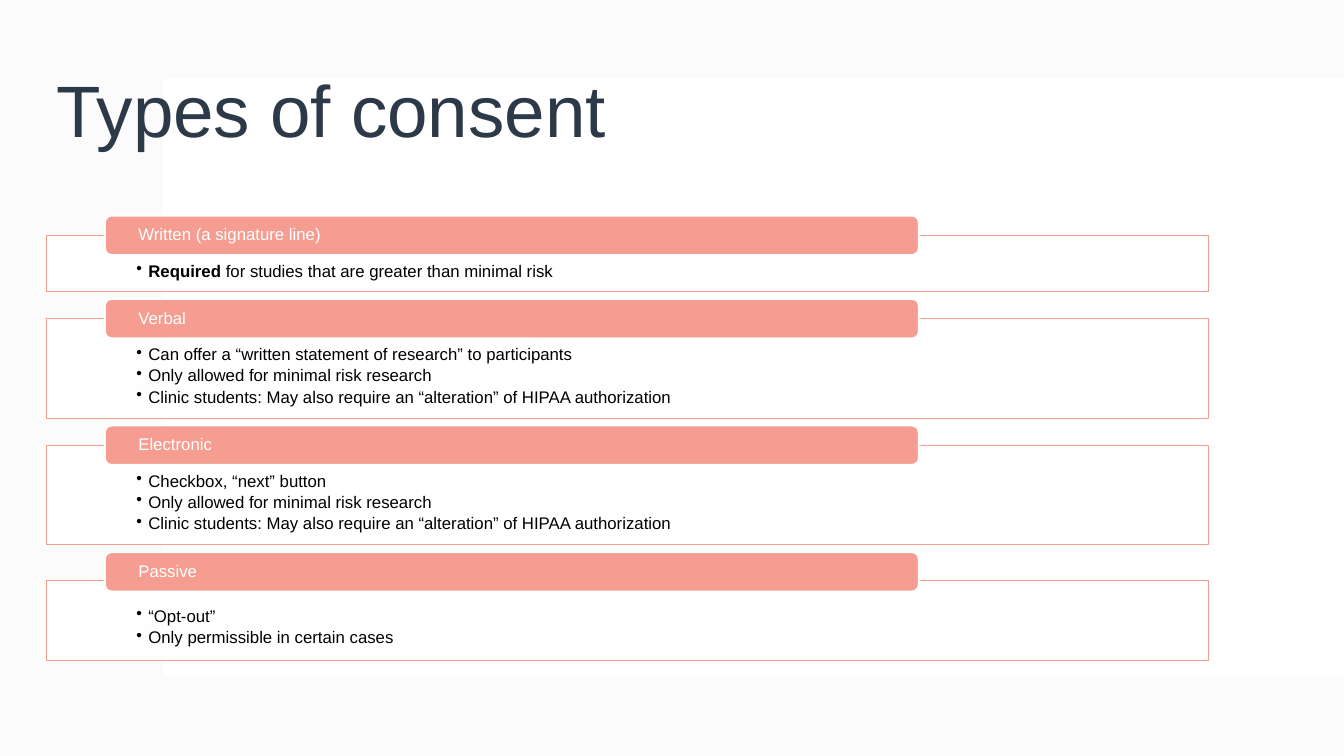
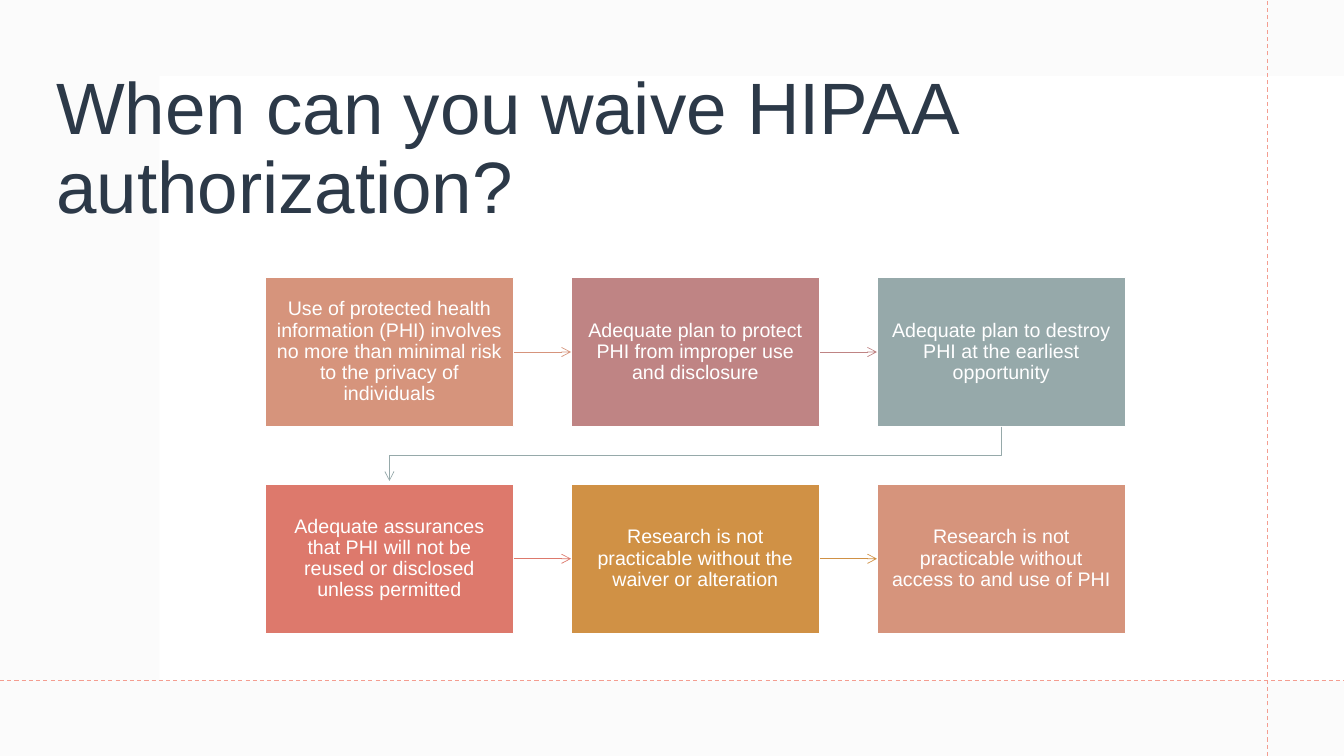
from dataclasses import dataclass

from lxml import etree
from pptx import Presentation
from pptx.dml.color import RGBColor
from pptx.enum import dml, shapes, text
from pptx.oxml import ns
from pptx.util import Cm, Pt

# Shared look
FONT = "Arial"
NAVY, CORAL, WHITE, BLACK, GREY = "2C3948", "F49D90", "FFFFFF", "000000", "F4F4F4"
SLIDE_W, SLIDE_H = 33.87, 19.05
MARGIN = 1.17


@dataclass
class Consent:
    heading: str
    bullets: list[str]
    height: float
    lead: float = 0.49
    bold_start: str = ""


@dataclass
class Criterion:
    wording: str
    color: str


CONSENTS = [
    Consent("Written (a signature line)",
            ["Required for studies that are greater than minimal risk"],
            1.42, bold_start="Required "),
    Consent("Verbal",
            ["Can offer a “written statement of research” to participants",
             "Only allowed for minimal risk research",
             "Clinic students: May also require an “alteration” of HIPAA authorization"],
            2.51),
    Consent("Electronic",
            ["Checkbox, “next” button",
             "Only allowed for minimal risk research",
             "Clinic students: May also require an “alteration” of HIPAA authorization"],
            2.51),
    Consent("Passive", ["“Opt-out”", "Only permissible in certain cases"], 2.01, lead=0.71),
]

CRITERIA = [
    Criterion("Use of protected health information (PHI) involves no more than "
              "minimal risk to the privacy of individuals", "D6947C"),
    Criterion("Adequate plan to protect PHI from improper use and disclosure", "BF8484"),
    Criterion("Adequate plan to destroy PHI at the earliest opportunity", "96A9AA"),
    Criterion("Adequate assurances that PHI will not be reused or disclosed "
              "unless permitted", "DD796C"),
    Criterion("Research is not practicable without the waiver or alteration", "D09145"),
    Criterion("Research is not practicable without access to and use of PHI", "D6947C"),
]


def rgb(color: str) -> RGBColor:
    return RGBColor.from_string(color)


def add_box(slide, left: float, top: float, width: float, height: float, fill: str,
            line: str | None = None, opacity: int = 100, rounded: bool = False):
    """Draw a flat rectangle; lengths in centimetres."""
    kind = shapes.MSO_SHAPE.ROUNDED_RECTANGLE if rounded else shapes.MSO_SHAPE.RECTANGLE
    box = slide.shapes.add_shape(kind, Cm(left), Cm(top), Cm(width), Cm(height))
    box.shadow.inherit = False
    box.fill.solid()
    box.fill.fore_color.rgb = rgb(fill)
    if opacity < 100:
        solid = box._element.spPr.find(ns.qn("a:solidFill"))
        etree.SubElement(solid[0], ns.qn("a:alpha"), val=str(opacity * 1000))
    if line:
        box.line.color.rgb = rgb(line)
        box.line.width = Pt(1)
    else:
        box.line.fill.background()
    return box


def set_frame(shape, side: float, top: float, bottom: float, anchor):
    frame = shape.text_frame
    frame.word_wrap = True
    frame.vertical_anchor = anchor
    frame.margin_left = frame.margin_right = Cm(side)
    frame.margin_top, frame.margin_bottom = Cm(top), Cm(bottom)
    return frame


def style(paragraph, size: float, color: str, align=text.PP_ALIGN.LEFT) -> None:
    paragraph.alignment = align
    paragraph.line_spacing = 0.9
    paragraph.font.name = FONT
    paragraph.font.size = Pt(size)
    paragraph.font.color.rgb = rgb(color)


def add_bullet(paragraph) -> None:
    props = paragraph._p.get_or_add_pPr()
    props.set("marL", str(Cm(0.3)))
    props.set("indent", str(-Cm(0.3)))
    etree.SubElement(props, ns.qn("a:buChar"), char="•")


def add_backdrop(slide, panel_left: float, panel_top: float, panel_height: float) -> None:
    add_box(slide, 0, 0, SLIDE_W, SLIDE_H, GREY, opacity=35)
    add_box(slide, panel_left, panel_top, SLIDE_W - panel_left, panel_height, WHITE)


def add_title(slide, wording: str, top: float, width: float, height: float, anchor) -> None:
    title = slide.shapes.add_textbox(Cm(MARGIN), Cm(top), Cm(width), Cm(height))
    paragraph = set_frame(title, 0.25, 0.13, 0.13, anchor).paragraphs[0]
    paragraph.text = wording
    style(paragraph, 52, NAVY)


def add_line(slide, x1: float, y1: float, x2: float, y2: float, color: str, width: float):
    line = slide.shapes.add_connector(
        shapes.MSO_CONNECTOR.STRAIGHT, Cm(x1), Cm(y1), Cm(x2), Cm(y2))
    line.line.color.rgb = rgb(color)
    line.line.width = Pt(width)
    etree.SubElement(line._element.spPr, ns.qn("a:effectLst"))
    return line


def add_arrowhead(line) -> None:
    outline = line._element.spPr.find(ns.qn("a:ln"))
    etree.SubElement(outline, ns.qn("a:tailEnd"), type="arrow")


def add_consent(slide, consent: Consent, top: float) -> float:
    """Draw one consent type and return the bottom of its frame."""
    body_top = top + consent.lead
    body = add_box(slide, MARGIN, body_top, 29.29, consent.height, WHITE, CORAL, opacity=90)
    frame = set_frame(body, 2.27, 0.69, 0.23, text.MSO_ANCHOR.TOP)
    for index, bullet in enumerate(consent.bullets):
        paragraph = frame.add_paragraph() if index else frame.paragraphs[0]
        add_bullet(paragraph)
        if consent.bold_start:
            start = paragraph.add_run()
            start.text = consent.bold_start
            start.font.bold = True
        paragraph.add_run().text = bullet.removeprefix(consent.bold_start)
        style(paragraph, 12, BLACK)
        paragraph.space_after = Pt(2.2)

    heading = add_box(slide, 2.65, top, 20.5, 0.98, CORAL, WHITE, rounded=True)
    paragraph = set_frame(heading, 0.79, 0, 0, text.MSO_ANCHOR.MIDDLE).paragraphs[0]
    paragraph.text = consent.heading
    style(paragraph, 12, WHITE)
    return body_top + consent.height


def build_consent_slide(slide) -> None:
    add_backdrop(slide, 4.11, 1.98, 15.06)
    add_title(slide, "Types of consent", 1.02, 29.29, 3.68, text.MSO_ANCHOR.MIDDLE)
    top = 5.44
    for consent in CONSENTS:
        top = add_consent(slide, consent, top) + 0.19


def build_waiver_slide(slide) -> None:
    add_backdrop(slide, 4.02, 1.91, 15.24)
    add_title(slide, "When can you waive HIPAA authorization?", 1.68, 30.15, 4.83,
              text.MSO_ANCHOR.TOP)

    # Dashed guides
    for ends in ((31.93, SLIDE_H, 31.93, 0), (0, 17.15, SLIDE_W, 17.15)):
        guide = add_line(slide, *ends, CORAL, 0.75)
        guide.line.dash_style = dml.MSO_LINE.DASH

    # Criteria grid
    columns, left, top = 3, 6.68, 6.99
    width, height, step_x, step_y = 6.27, 3.76, 7.71, 5.21
    cards = []
    for index, criterion in enumerate(CRITERIA):
        row, column = divmod(index, columns)
        card = add_box(slide, left + column * step_x, top + row * step_y,
                       width, height, criterion.color, WHITE)
        paragraph = set_frame(card, 0.3, 0.32, 0.32, text.MSO_ANCHOR.MIDDLE).paragraphs[0]
        paragraph.text = criterion.wording
        style(paragraph, 14, WHITE, text.PP_ALIGN.CENTER)
        cards.append(card)

    # Arrows along each row
    for index, criterion in enumerate(CRITERIA):
        if index % columns == columns - 1:
            continue
        arrow = add_line(slide, 0, 0, 1, 1, criterion.color, 0.5)
        arrow.begin_connect(cards[index], 3)
        arrow.end_connect(cards[index + 1], 1)
        add_arrowhead(arrow)

    # Arrow from the first row to the second
    start_x = left + (columns - 1) * step_x + width / 2
    end_x = left + width / 2
    start_y, end_y = top + height, top + step_y - 0.08
    turn_y = top + (height + step_y) / 2
    route = slide.shapes.build_freeform(Cm(start_x), Cm(start_y))
    route.add_line_segments(
        [(Cm(x), Cm(y)) for x, y in ((start_x, turn_y), (end_x, turn_y), (end_x, end_y))],
        close=False)
    row_break = route.convert_to_shape()
    row_break.shadow.inherit = False
    row_break.fill.background()
    row_break.line.color.rgb = rgb(CRITERIA[columns - 1].color)
    row_break.line.width = Pt(0.5)
    add_arrowhead(row_break)


def main() -> None:
    deck = Presentation()
    deck.slide_width, deck.slide_height = Cm(SLIDE_W), Cm(SLIDE_H)
    for build in (build_consent_slide, build_waiver_slide):
        build(deck.slides.add_slide(deck.slide_layouts[6]))
    deck.save("out.pptx")


if __name__ == "__main__":
    main()
